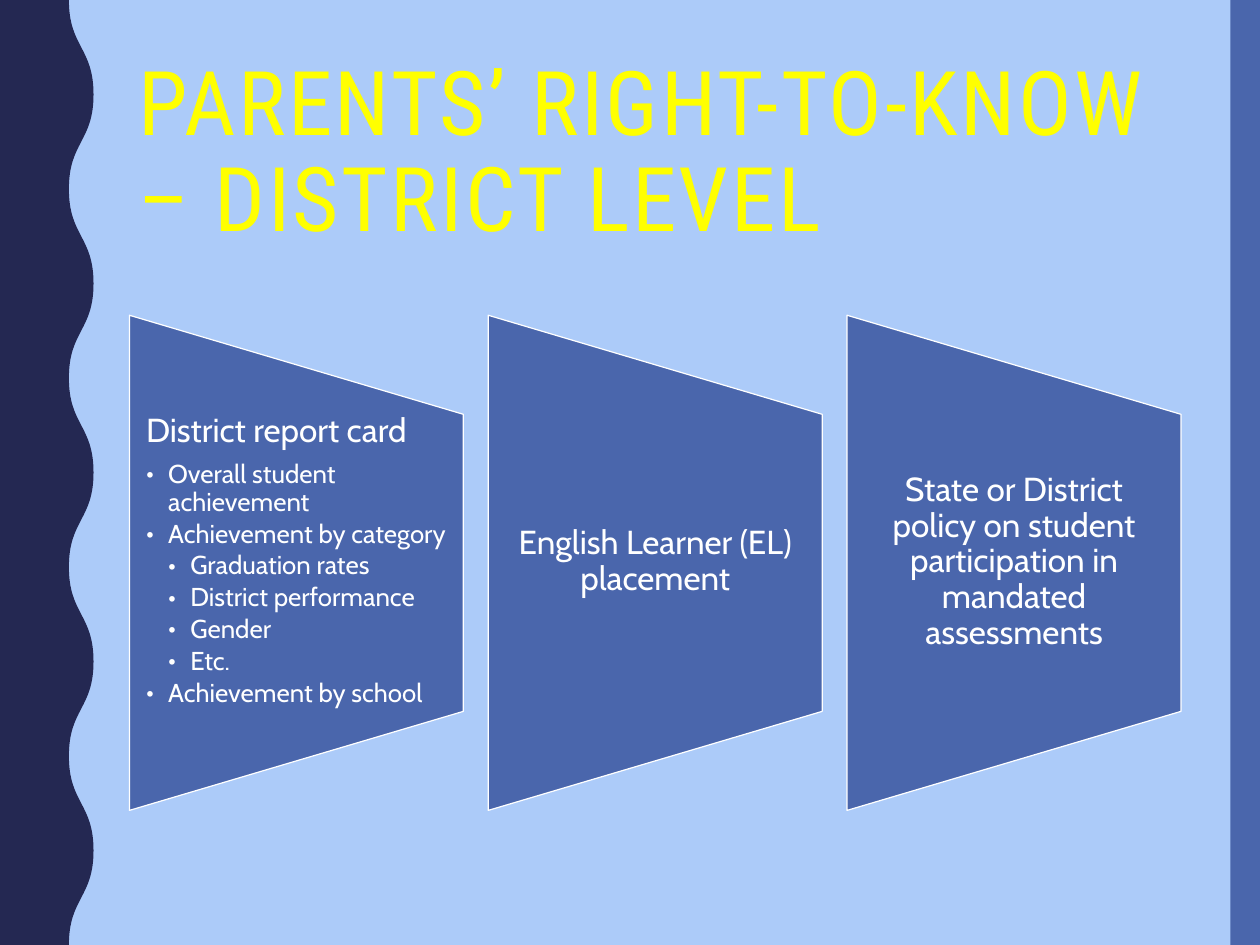
from pptx import Presentation
from pptx.dml.color import RGBColor
from pptx.enum import shapes, text
from pptx.oxml import parse_xml
from pptx.oxml.ns import nsdecls, qn
from pptx.util import Pt

TITLE = "PARENTS’ RIGHT-TO-KNOW – DISTRICT LEVEL"
# Each panel lists (level, wording); level 0 is the heading.
PANELS = [
    [
        (0, "District report card"),
        (1, "Overall student achievement"),
        (1, "Achievement by category"),
        (2, "Graduation rates"),
        (2, "District performance"),
        (2, "Gender"),
        (2, "Etc."),
        (1, "Achievement by school"),
    ],
    [(0, "English Learner (EL) placement")],
    [(0, "State or District policy on student participation in mandated assessments")],
]

SKY, BLUE, NAVY, WHITE, YELLOW = "ACCBF9", "4A66AC", "242852", "FFFFFF", "FFFF00"
TITLE_FONT, BODY_FONT = "Roboto Condensed", "Cabin"
WIDTH, HEIGHT = 1024, 768
SIDEBAR_WIDTH = 24
WAVE_IN, WAVE_OUT, HALF_WAVES = 56, 76, 10
LEFT, PITCH = 105.2, 291.6
PANEL_MIDDLE, PANEL_WIDTH, PANEL_HEIGHT = 457.4, 271.4, 402.4
WORDING_TOP, WORDING_HEIGHT = 336.2, 241.4
INDENT = 18


def color(value):
    return RGBColor.from_string(value)


def paint(shape, fill, line=None):
    shape.shadow.inherit = False
    shape.fill.solid()
    shape.fill.fore_color.rgb = color(fill)
    if line:
        shape.line.color.rgb = color(line)
        shape.line.width = Pt(1)
    else:
        shape.line.fill.background()


def set_font(paragraph, name, size, value):
    paragraph.font.name = name
    paragraph.font.size = Pt(size)
    paragraph.font.color.rgb = color(value)


def add_wave(slide):
    """Draw the left band, whose right edge is a chain of S-curves."""
    half = HEIGHT / HALF_WAVES
    edge = [(Pt(WAVE_OUT if i % 2 else WAVE_IN), Pt(i * half))
            for i in range(HALF_WAVES + 1)]
    builder = slide.shapes.build_freeform(*edge[0])
    builder.add_line_segments(edge[1:] + [(0, Pt(HEIGHT)), (0, 0)], close=True)
    wave = builder.convert_to_shape()
    paint(wave, NAVY)

    # Bend each edge segment, with both controls at its half height.
    segments = list(wave._element.iter(qn("a:lnTo")))
    for segment, (x1, y1), (x2, y2) in zip(segments, edge, edge[1:]):
        bend = (y1 + y2) // 2
        points = "".join(f'<a:pt x="{x}" y="{y}"/>'
                         for x, y in ((x1, bend), (x2, bend), (x2, y2)))
        curve = parse_xml(f'<a:cubicBezTo {nsdecls("a")}>{points}</a:cubicBezTo>')
        segment.getparent().replace(segment, curve)


def add_bullet(paragraph, level):
    properties = paragraph._p.get_or_add_pPr()
    properties.set("marL", str(Pt(INDENT * level)))
    properties.set("indent", str(-Pt(INDENT)))
    properties.append(parse_xml(f'<a:buFont {nsdecls("a")} typeface="{BODY_FONT}"/>'))
    properties.append(parse_xml(f'<a:buChar {nsdecls("a")} char="•"/>'))


def add_panel(slide, left, lines):
    # The preset is a quarter turn away, so its sides are swapped about the centre.
    panel = slide.shapes.add_shape(
        shapes.MSO_SHAPE.FLOWCHART_MANUAL_OPERATION,
        Pt(left + (PANEL_WIDTH - PANEL_HEIGHT) / 2), Pt(PANEL_MIDDLE - PANEL_WIDTH / 2),
        Pt(PANEL_HEIGHT), Pt(PANEL_WIDTH))
    panel.rotation = 270
    paint(panel, BLUE, WHITE)

    wording = slide.shapes.add_textbox(
        Pt(left), Pt(WORDING_TOP), Pt(PANEL_WIDTH), Pt(WORDING_HEIGHT))
    frame = wording.text_frame
    frame.word_wrap = True
    frame.margin_left = frame.margin_right = Pt(13.5)
    frame.margin_top = frame.margin_bottom = 0
    is_list = len(lines) > 1
    frame.vertical_anchor = text.MSO_ANCHOR.TOP if is_list else text.MSO_ANCHOR.MIDDLE
    for i, (level, line) in enumerate(lines):
        paragraph = frame.add_paragraph() if i else frame.paragraphs[0]
        paragraph.text = line
        paragraph.level = level
        if level:
            add_bullet(paragraph, level)
        paragraph.alignment = text.PP_ALIGN.LEFT if is_list else text.PP_ALIGN.CENTER
        paragraph.line_spacing = 0.9
        paragraph.space_after = Pt(3.15 if level else 9.45)
        set_font(paragraph, BODY_FONT, 21 if level else 27, WHITE)


def add_title(slide):
    title = slide.shapes.title
    title.left, title.top, title.width, title.height = Pt(105.2), Pt(42), Pt(855), Pt(167)
    frame = title.text_frame
    frame.text = TITLE
    frame.word_wrap = True
    frame.auto_size = text.MSO_AUTO_SIZE.NONE
    frame.vertical_anchor = text.MSO_ANCHOR.MIDDLE
    paragraph = frame.paragraphs[0]
    paragraph.alignment = text.PP_ALIGN.LEFT
    paragraph.line_spacing = 0.9
    set_font(paragraph, TITLE_FONT, 72.5, YELLOW)
    paragraph._p.pPr.find(qn("a:defRPr")).set("spc", "210")


def main():
    deck = Presentation()
    deck.slide_width, deck.slide_height = Pt(WIDTH), Pt(HEIGHT)
    slide = deck.slides.add_slide(deck.slide_layouts[5])
    slide.background.fill.solid()
    slide.background.fill.fore_color.rgb = color(SKY)
    sidebar = slide.shapes.add_shape(
        shapes.MSO_SHAPE.RECTANGLE,
        Pt(WIDTH - SIDEBAR_WIDTH), 0, Pt(SIDEBAR_WIDTH), Pt(HEIGHT))
    paint(sidebar, BLUE)
    add_wave(slide)
    for i, lines in enumerate(PANELS):
        add_panel(slide, LEFT + i * PITCH, lines)
    add_title(slide)
    deck.save("out.pptx")


if __name__ == "__main__":
    main()
